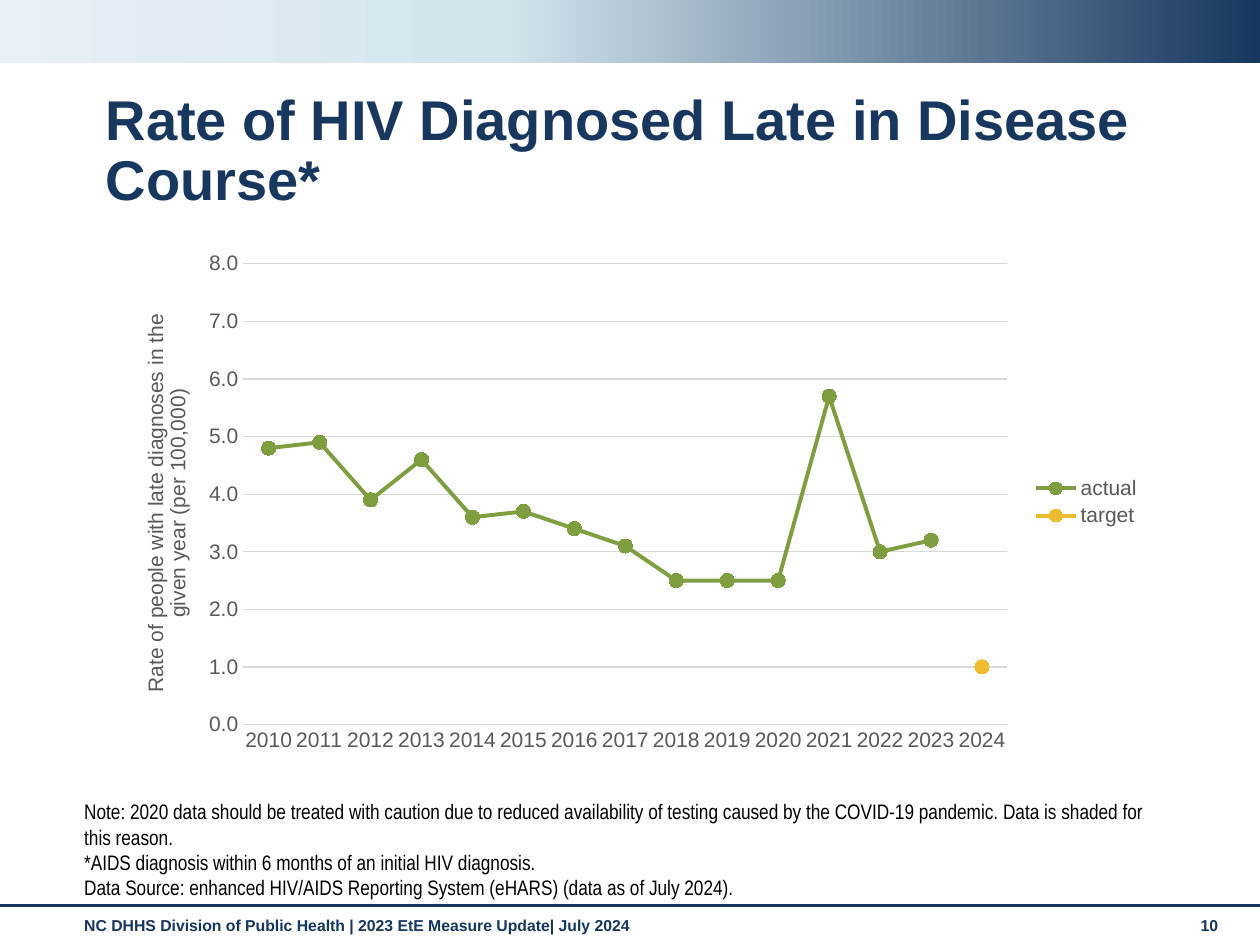
from lxml import etree
from pptx import Presentation
from pptx import util as u
from pptx.chart.data import CategoryChartData
from pptx.dml.color import RGBColor
from pptx.enum import chart as ch, shapes, text
from pptx.oxml import parse_xml
from pptx.oxml.ns import nsdecls, qn

Inches, Pt = u.Inches, u.Pt
COLORS = {
    "navy": "17375E", "footer": "15365E", "sky": "D3E4ED", "mist": "E9F1F6",
    "black": "000000", "gray": "595959", "grid": "D9D9D9", "white": "FFFFFF",
    "actual": "7F9E3F", "target": "EFBB2F",
}
NOTES = [
    "Note: 2020 data should be treated with caution due to reduced availability of "
    "testing caused by the COVID-19 pandemic. Data is shaded for this reason.",
    "*AIDS diagnosis within 6 months of an initial HIV diagnosis.",
    "Data Source: enhanced HIV/AIDS Reporting System (eHARS) (data as of July 2024).",
]
RATES = [4.8, 4.9, 3.9, 4.6, 3.6, 3.7, 3.4, 3.1, 2.5, 2.5, 2.5, 5.7, 3.0, 3.2, None]
TARGETS = [None] * 14 + [1.0]


def rgb(name):
    return RGBColor.from_string(COLORS[name])


def style_font(font, size, color, bold=False, face="Arial"):
    font.name, font.size, font.bold = face, Pt(size), bold
    font.color.rgb = rgb(color)


def add_text(slide, lines, box, size, color, bold=False, face="Arial",
             anchor=text.MSO_ANCHOR.TOP, spacing=None):
    frame = slide.shapes.add_textbox(*map(Inches, box)).text_frame
    frame.word_wrap = True
    frame.vertical_anchor = anchor
    for i, line in enumerate(lines):
        paragraph = frame.paragraphs[0] if i == 0 else frame.add_paragraph()
        paragraph.line_spacing = spacing
        run = paragraph.add_run()
        run.text = line
        style_font(run.font, size, color, bold, face)


def add_banner(slide):
    banner = slide.shapes.add_shape(
        shapes.MSO_SHAPE.RECTANGLE, 0, 0, Inches(10), Inches(0.5))
    banner.shadow.inherit = False
    banner.line.fill.background()
    banner.fill.gradient()
    banner.fill.gradient_angle = 180
    stops = banner._element.spPr.find(qn("a:gradFill")).find(qn("a:gsLst"))
    for stop in list(stops):
        stops.remove(stop)
    for percent, name in ((0, "navy"), (60, "sky"), (100, "mist")):
        stops.append(parse_xml(
            f'<a:gs {nsdecls("a")} pos="{percent * 1000}">'
            f'<a:srgbClr val="{COLORS[name]}"/></a:gs>'))


def add_rule(slide, y):
    rule = slide.shapes.add_connector(
        shapes.MSO_CONNECTOR.STRAIGHT, 0, Inches(y), Inches(10), Inches(y))
    rule.line.color.rgb = rgb("navy")
    rule.line.width = Pt(1.75)
    etree.SubElement(rule._element.spPr, qn("a:effectLst"))


def set_layout(parent, index, inner=False, **position):
    """Place a chart part by fractions of the chart area."""
    for old in parent.findall(qn("c:layout")):
        parent.remove(old)
    target = '<c:layoutTarget val="inner"/>' if inner else ""
    modes = '<c:xMode val="edge"/><c:yMode val="edge"/>'
    values = "".join(f'<c:{key} val="{val}"/>' for key, val in position.items())
    parent.insert(index, parse_xml(
        f'<c:layout {nsdecls("c")}><c:manualLayout>{target}{modes}{values}'
        '</c:manualLayout></c:layout>'))


def style_axes(chart):
    years, rates = chart.category_axis, chart.value_axis
    for axis in (years, rates):
        axis.major_tick_mark = axis.minor_tick_mark = ch.XL_TICK_MARK.NONE
        style_font(axis.tick_labels.font, 12, "gray")
    years.has_major_gridlines = False
    rates.has_major_gridlines = True
    for line in (years.format.line, rates.major_gridlines.format.line):
        line.color.rgb = rgb("grid")
        line.width = Pt(0.75)
    rates.format.line.fill.background()
    rates.minimum_scale, rates.maximum_scale, rates.major_unit = 0, 8, 1
    rates.tick_labels.number_format = "0.0"
    rates.tick_labels.number_format_is_linked = False

    caption = rates.axis_title
    paragraph = caption.text_frame.paragraphs[0]
    run = paragraph.add_run()
    run.text = "Rate of people with late diagnoses in the given year (per 100,000)"
    style_font(run.font, 12, "gray")
    body = caption.text_frame._txBody.find(qn("a:bodyPr"))
    body.set("rot", "-5400000")
    body.set("vert", "horz")
    set_layout(caption._element, 1, x=0.03, y=0.13)


def add_rate_chart(slide):
    data = CategoryChartData(number_format="0.0")
    data.categories = [str(year) for year in range(2010, 2025)]
    data.add_series("actual", RATES)
    data.add_series("target", TARGETS)
    chart = slide.shapes.add_chart(
        ch.XL_CHART_TYPE.LINE_MARKERS, *map(Inches, (0.85, 1.93, 8.31, 4.11)), data).chart
    style_font(chart.font, 12, "black")
    chart.has_title = False
    chart.has_legend = True
    chart.legend.position = ch.XL_LEGEND_POSITION.RIGHT
    chart.legend.include_in_layout = False
    style_font(chart.legend.font, 12, "gray")
    style_axes(chart)
    set_layout(chart._chartSpace.chart.plotArea, 0, inner=True,
               x=0.13, y=0.04, w=0.73, h=0.89)

    plot = chart.plots[0]
    plot.vary_by_categories = False
    for series in plot.series:
        series.smooth = False
        series.format.line.color.rgb = rgb(series.name)
        series.format.line.width = Pt(2.25)
        marker = series.marker
        marker.style, marker.size = ch.XL_MARKER_STYLE.CIRCLE, 8
        marker.format.fill.solid()
        marker.format.fill.fore_color.rgb = rgb(series.name)
        marker.format.line.fill.background()


def main():
    deck = Presentation()
    deck.slide_width, deck.slide_height = Inches(10), Inches(7.5)
    slide = deck.slides.add_slide(deck.slide_layouts[6])
    slide.background.fill.solid()
    slide.background.fill.fore_color.rgb = rgb("white")

    # Footer, page number and banner
    add_text(slide, ["NC DHHS Division of Public Health | 2023 EtE Measure Update| July 2024"],
             (0.57, 7.22, 8.74, 0.29), 9, "footer", bold=True)
    add_text(slide, ["10"], (9.43, 7.22, 0.44, 0.3), 9, "footer", bold=True)
    add_banner(slide)
    add_rule(slide, 7.19)

    # Title, chart and notes
    add_text(slide, ["Rate of HIV Diagnosed Late in Disease Course*"],
             (0.74, 0.68, 8.58, 0.6), 32, "navy", bold=True, spacing=0.9)
    add_rate_chart(slide)
    add_text(slide, NOTES, (0.57, 6.83, 8.74, 0.36), 12, "black",
             face="Arial Narrow", anchor=text.MSO_ANCHOR.BOTTOM)

    deck.save("out.pptx")


if __name__ == "__main__":
    main()
